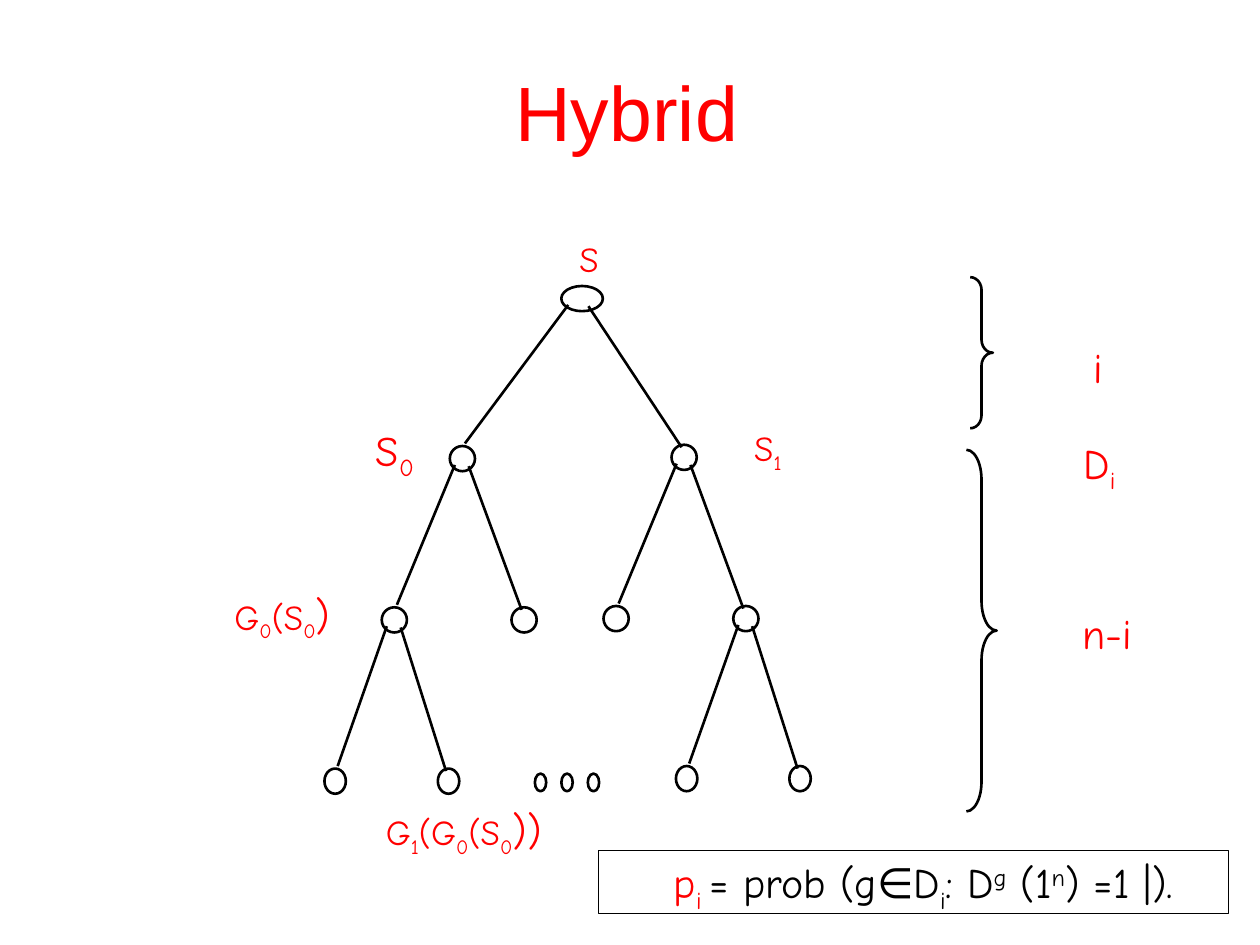
from lxml import etree
from pptx import Presentation
from pptx import util as u
from pptx.dml import color
from pptx.enum import shapes, text
from pptx.oxml import ns

RED, BLACK = "FF0000", "000000"
HAND = "Comic Neue"
SUB, SUPER = -25000, 30000


def paint(target, value):
    target.rgb = color.RGBColor.from_string(value)


def outline(shape, width=1.5):
    shape.shadow.inherit = False
    shape.fill.background()
    paint(shape.line.color, BLACK)
    shape.line.width = u.Pt(width)


def add_shape(page, kind, box, width=1.5):
    shape = page.shapes.add_shape(kind, *map(u.Inches, box))
    outline(shape, width)
    return shape


def add_node(page, center, size):
    (x, y), (w, h) = center, size
    add_shape(page, shapes.MSO_SHAPE.OVAL, (x - w / 2, y - h / 2, w, h))


def add_edge(page, start, end):
    edge = page.shapes.add_connector(
        shapes.MSO_CONNECTOR.STRAIGHT, *map(u.Inches, (*start, *end)))
    paint(edge.line.color, BLACK)
    edge.line.width = u.Pt(1.5)
    etree.SubElement(edge._element.spPr, ns.qn("a:effectLst"))


def write(shape, spans, size, font=HAND, align=text.PP_ALIGN.CENTER,
          anchor=text.MSO_ANCHOR.MIDDLE, wrap=True):
    """Spans are (words, baseline, colour, size); the last three are optional."""
    frame = shape.text_frame
    frame.word_wrap = wrap
    frame.vertical_anchor = anchor
    para = frame.paragraphs[0]
    para.alignment = align
    para.font.name, para.font.size = font, u.Pt(size)
    paint(para.font.color, RED)
    for words, baseline, tint, points in (
            (*span, *(0, RED, size)[len(span) - 1:]) for span in spans):
        run = para.add_run()
        run.text = words
        run.font.name, run.font.size = font, u.Pt(points)
        paint(run.font.color, tint)
        if baseline:
            run._r.get_or_add_rPr().set("baseline", str(baseline))
    return para


def add_label(page, box, spans, size, **style):
    return write(page.shapes.add_textbox(*map(u.Inches, box)), spans, size, **style)


def add_fork(page, parent, children, reach=0.06):
    """Two edges from a node down to its left and right child."""
    x, y = parent
    (left, left_y), (right, right_y) = children
    add_edge(page, (x - reach, y + 0.05), (left + 0.02, left_y - 0.12))
    add_edge(page, (x + 0.05, y + 0.06), (right - 0.02, right_y - 0.08))


def draw_tree(page, box):
    left, top, width, height = box
    root = (left + 2.04, top + 0.53)
    inner, leaf = (0.2, 0.2), (0.17, 0.2)
    leaf_y = top + height - 0.61

    # Root and its two children
    pair = [(left + 1.09, top + 1.8), (left + 2.85, top + 1.79)]
    add_node(page, root, (0.33, 0.2))
    add_fork(page, root, pair, reach=0.11)

    # Each half has an outer grandchild that forks again
    for outer, (x, y) in enumerate(pair):
        grandchildren = [(x - 0.54, y + 1.28), (x + 0.49, y + 1.28)]
        forked = grandchildren[outer]
        leaves = [(forked[0] - 0.47, leaf_y - 0.02 * outer),
                  (forked[0] + 0.43, leaf_y - 0.02 * outer)]
        for center in [(x, y), *grandchildren]:
            add_node(page, center, inner)
        for center in leaves:
            add_node(page, center, leaf)
        add_fork(page, (x, y), grandchildren)
        add_fork(page, forked, leaves)

    # Dots for the leaves left out
    for step in range(3):
        add_node(page, (left + 1.71 + 0.21 * step, leaf_y + 0.01), (0.09, 0.14))

    # Node labels
    zero = ("0", SUB)
    close = (0, RED, 24)
    labels = [
        (1.67, 0, 0.85, 20, [("S",)]),
        (-0.01, 1.54, 1.13, 24, [("S",), zero]),
        (2.95, 1.52, 1.13, 20, [("S",), ("1", SUB)]),
        (-1.25, 2.83, 1.82, 20, [("G",), zero, ("(S",), zero, (")", *close)]),
        (0.19, 4.54, 1.82, 20, [("G",), ("1", SUB), ("(G",), zero, ("(S",), zero,
                                ("))", *close)]),
    ]
    for x, y, label_width, size, spans in labels:
        add_label(page, (left + x, top + y, label_width, 0.43), spans, size)


def draw_levels(page, box):
    left, top, _, height = box
    # Braces for the top i levels and the other n-i
    for x, y, w, h, bend in [(0.03, 0, 0.18, 1.2, 0.57),
                             (0, 1.37, 0.24, height - 1.37, 0.98)]:
        brace = add_shape(page, shapes.MSO_SHAPE.RIGHT_BRACE, (left + x, top + y, w, h))
        brace.adjustments[0] = bend
    add_label(page, (left + 0.9, top + 0.46, 0.3, 0.5), [("i",)], 24, wrap=False)
    add_label(page, (left + 0.81, top + 2.57, 0.61, 0.5), [("n-i",)], 24, wrap=False)
    add_label(page, (left + 0.83, top + 1.22, 1.19, 0.5), [("D",), ("i", SUB)], 24,
              align=text.PP_ALIGN.LEFT, anchor=text.MSO_ANCHOR.TOP)


def draw_formula(page, box):
    frame = add_shape(page, shapes.MSO_SHAPE.RECTANGLE, box, width=0.75)
    spans = [("p",), ("i ", SUB)] + [
        (words, baseline, BLACK) for words, baseline in [
            ("= prob (g∈D", 0), ("i", SUB), (": D", 0), ("g", SUPER),
            (" (1", 0), ("n", SUPER), (") =1 |).", 0)]]
    para = write(frame, spans, 24, align=text.PP_ALIGN.LEFT, anchor=text.MSO_ANCHOR.TOP)
    para._p.get_or_add_pPr().set("marL", str(u.Inches(0.5)))


def main():
    deck = Presentation()
    deck.slide_width, deck.slide_height = u.Inches(10), u.Inches(7.5)
    page = deck.slides.add_slide(deck.slide_layouts[6])
    add_label(page, (0.64, 0.25, 8.5, 1.25), [(" Hybrid",)], 44, font="Arial")
    draw_tree(page, (2.58, 1.84, 3.86, 4.97))
    draw_levels(page, (7.67, 2.2, 2, 4.24))
    draw_formula(page, (4.75, 6.75, 5, 0.5))
    deck.save("out.pptx")


if __name__ == "__main__":
    main()
